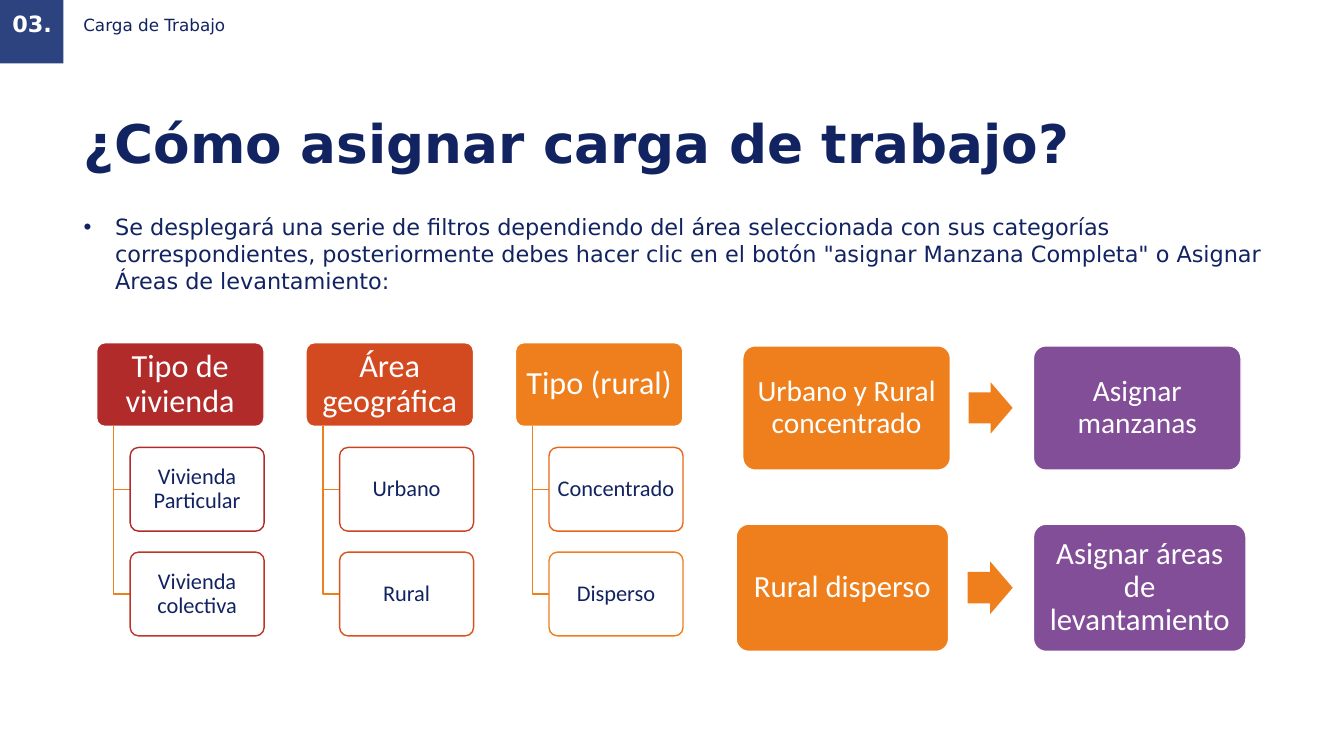
from lxml import etree
from pptx import Presentation
from pptx.dml.color import RGBColor
from pptx.enum.shapes import MSO_SHAPE
from pptx.enum.text import MSO_ANCHOR, PP_ALIGN
from pptx.oxml.ns import qn
from pptx.util import Pt

RECT, ROUND, ARROW = (MSO_SHAPE.RECTANGLE, MSO_SHAPE.ROUNDED_RECTANGLE,
                      MSO_SHAPE.RIGHT_ARROW)
TOP, MIDDLE = MSO_ANCHOR.TOP, MSO_ANCHOR.MIDDLE
LEFT, CENTER = PP_ALIGN.LEFT, PP_ALIGN.CENTER
NAVY, BLUE, WHITE = "122361", "2C437F", "FFFFFF"
ORANGE, PURPLE = "EE7F1C", "824E98"
SANS, BODY = "DejaVu Sans", "Calibri"

deck = Presentation()
deck.slide_width, deck.slide_height = Pt(960), Pt(540)
slide = deck.slides.add_slide(deck.slide_layouts[6])
shapes = slide.shapes
rgb = RGBColor.from_string


def block(kind, box, fill, line=None):
    shape = shapes.add_shape(kind, *map(Pt, box))
    shape.shadow.inherit = False
    shape.fill.solid()
    shape.fill.fore_color.rgb = rgb(fill)
    if line:
        shape.line.color.rgb = rgb(line)
        shape.line.width = Pt(1)
    else:
        shape.line.fill.background()
    if kind == ROUND:
        shape.adjustments[0] = 0.1
    return shape


def write(shape, text, size, color, face=BODY, bold=False, align=CENTER,
          anchor=MIDDLE, space=0.9, inset=(3.6, 3.6), bullet=False):
    frame = shape.text_frame
    side, edge = map(Pt, inset)
    para = frame.paragraphs[0]
    para.text = text
    if bullet:
        props = para._p.get_or_add_pPr()
        props.set("marL", str(Pt(22.5)))
        props.set("indent", str(-Pt(22.5)))
        etree.SubElement(props, qn("a:buFont"), typeface="Arial")
        etree.SubElement(props, qn("a:buChar"), char="•")
    formats = (
        (frame, dict(word_wrap=True, vertical_anchor=anchor, margin_left=side,
                     margin_right=side, margin_top=edge, margin_bottom=edge)),
        (para, dict(alignment=align, line_spacing=space)),
        (para.runs[0].font, dict(name=face, size=Pt(size), bold=bold)),
    )
    for part, values in formats:
        for key, value in values.items():
            setattr(part, key, value)
    para.runs[0].font.color.rgb = rgb(color)


# Section number and header, title, introduction
block(RECT, (0, 0, 45.4, 45.4), BLUE)
intro = ('Se desplegará una serie de filtros dependiendo del área seleccionada '
         'con sus categorías correspondientes, posteriormente debes hacer clic '
         'en el botón "asignar Manzana Completa" o Asignar Áreas de '
         'levantamiento:')
plain = dict(align=LEFT, inset=(0, 3.6))
long = dict(plain, anchor=TOP, space=1.0)
texts = [
    ((0, 4.3, 46, 27.4), "03.", 16, WHITE, dict(bold=True, inset=(7.2, 3.6))),
    ((59.5, -0.7, 857.5, 39), "Carga de Trabajo", 12, NAVY, plain),
    ((59.8, 75.6, 857.5, 90.7), "¿Cómo asignar carga de trabajo?", 38, NAVY,
     dict(long, bold=True)),
    ((59.8, 149, 856.8, 375), intro, 16, NAVY, dict(long, bullet=True)),
]
for box, text, size, color, style in texts:
    write(shapes.add_textbox(*map(Pt, box)), text, size, color, SANS, **style)

# Filter columns: a heading with its categories hung from a trunk line
columns = [
    ("Tipo de vivienda", "B12B2B",
     [("Vivienda Particular", "B12B2B"), ("Vivienda colectiva", "BE3527")]),
    ("Área geográfica", "D34A20", [("Urbano", "CC4323"), ("Rural", "DA531E")]),
    ("Tipo (rural)", ORANGE, [("Concentrado", "E7671A"), ("Disperso", ORANGE)]),
]
high, top = 59.8, 244.8
for col, (name, fill, items) in enumerate(columns):
    left = 69 + 149.6 * col
    head = block(ROUND, (left, top, 119.6, high), fill, WHITE)
    write(head, name, 23, WHITE, inset=(3.5, 2.3))
    trunk, inner = left + 12, left + 24
    for row, (item, edge) in enumerate(items, 1):
        y = top + 74.8 * row
        mid = y + high / 2
        path = shapes.build_freeform(Pt(trunk), Pt(top + high))
        path.add_line_segments([(Pt(trunk), Pt(mid)), (Pt(inner), Pt(mid))],
                               close=False)
        elbow = path.convert_to_shape()
        elbow.shadow.inherit = False
        elbow.fill.background()
        elbow.line.color.rgb = rgb(ORANGE)
        elbow.line.width = Pt(1)
        cell = block(ROUND, (inner, y, 95.7, high), WHITE, edge)
        write(cell, item, 16, NAVY, inset=(2.2, 1.5))

# Area flows: selection, arrow, action
flows = [
    ("Urbano y Rural concentrado", "Asignar manzanas", 21,
     530.6, 247, 148.3, 88.8, (691.8, 31.5, 36.8)),
    ("Rural disperso", "Asignar áreas de levantamiento", 22,
     525.8, 374.4, 151.8, 90.9, (691.2, 32.2, 37.6)),
]
for area, action, size, left, y, wide, tall, (tip, span, rise) in flows:
    for text, x, fill in [(area, left, ORANGE), (action, 738.2, PURPLE)]:
        write(block(ROUND, (x, y, wide, tall), fill, WHITE), text, size, WHITE,
              inset=(6.4, 6.4))
    arrow = block(ARROW, (tip, y + (tall - rise) / 2, span, rise), ORANGE)
    arrow.adjustments[0], arrow.adjustments[1] = 0.6, 0.5

deck.save("out.pptx")
